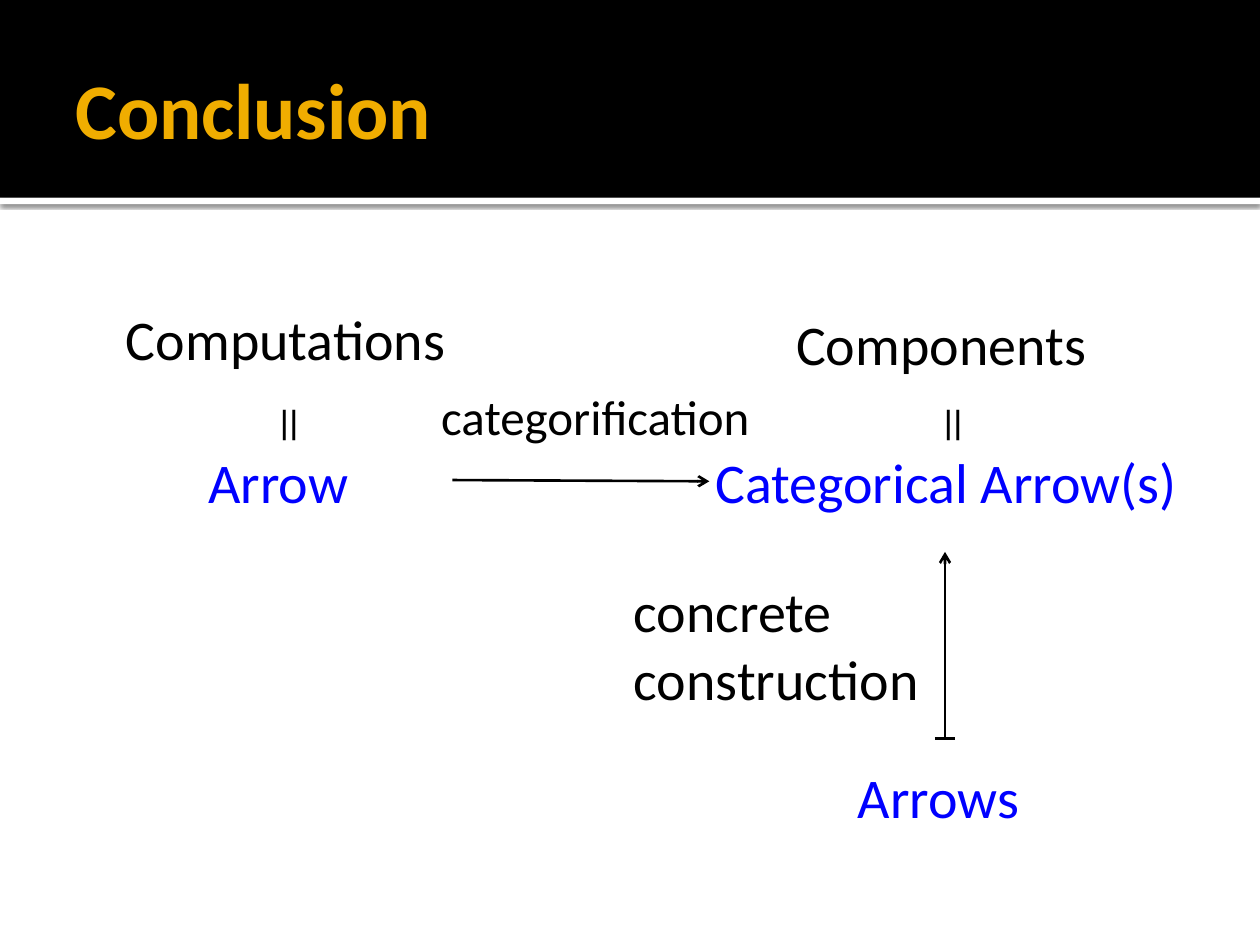
from dataclasses import dataclass
from lxml.etree import SubElement as Sub
from pptx import Presentation
from pptx.dml.color import RGBColor as Rgb
from pptx.enum.shapes import MSO_CONNECTOR as Conn, MSO_SHAPE as Kind
from pptx.enum.text import MSO_ANCHOR as Anchor, PP_ALIGN as Align
from pptx.oxml.ns import qn
from pptx.util import Pt

UNIT = 9144


@dataclass(frozen=True)
class Theme:
    """Colours, font and type sizes of the slide."""
    font: str = "Calibri"
    black: Rgb = Rgb(0, 0, 0)
    white: Rgb = Rgb(255, 255, 255)
    gold: Rgb = Rgb(0xF0, 0xAD, 0)
    blue: Rgb = Rgb(0, 0, 255)
    head: int = 45
    body: int = 32
    label: int = 28
    sign: int = 24
    rule: float = 1.5


LOOK = Theme()


def px(*nums):
    """Turn px lengths into EMU."""
    return [num * UNIT for num in nums]


def apply(item, form):
    """Set each attribute named in a dict."""
    for key, val in form.items():
        setattr(item, key, val)


def text(slide, box, words, size=LOOK.body, tint=LOOK.black, bold=False,
         align=Align.LEFT, frame=None, vert=None):
    """Place a text box with one paragraph for each line."""
    body = slide.shapes.add_textbox(*px(*box)).text_frame
    apply(body, {"word_wrap": True, "text": words, **(frame or {})})
    if vert:
        body._txBody.bodyPr.set("vert", vert)
    for para in body.paragraphs:
        para.alignment = align
        font = para.runs[0].font
        apply(font, {"name": LOOK.font, "size": Pt(size), "bold": bold})
        font.color.rgb = tint


def line(slide, start, end, arrow=False):
    """Draw a straight rule, with an arrowhead at its end if asked."""
    rule = slide.shapes.add_connector(Conn.STRAIGHT, *px(*start, *end))
    rule.line.width = Pt(LOOK.rule)
    rule.line.color.rgb = LOOK.black
    if arrow:
        Sub(rule.line._get_or_add_ln(), qn("a:tailEnd"), type="arrow")
    Sub(rule._element.spPr, qn("a:effectLst"))


def bar(slide, box, tint):
    """Draw a plain filled bar."""
    shape = slide.shapes.add_shape(Kind.RECTANGLE, *px(*box))
    shape.shadow.inherit = False
    shape.fill.solid()
    shape.fill.fore_color.rgb = tint
    shape.line.fill.background()
    return shape


def shade(shape):
    """Cast a soft shadow straight down."""
    glow = Sub(shape._element.spPr.find(qn("a:effectLst")), qn("a:outerShdw"),
               blurRad=str(Pt(2.5)), dist=str(Pt(0.8)), dir="5400000",
               algn="tl", rotWithShape="0")
    tone = Sub(glow, qn("a:srgbClr"), val=str(LOOK.black))
    Sub(tone, qn("a:alpha"), val="60000")


def header(slide, box, title):
    """Place the title band and the shaded strip under it."""
    x, y, w, h = box
    shade(bar(slide, (x, y + h, w, 5), LOOK.white))
    bar(slide, box, LOOK.black)
    text(slide, (x + 50, y + 17, w - 100, 137), title, LOOK.head, LOOK.gold,
         True, frame={"vertical_anchor": Anchor.MIDDLE})


def equals(slide, x, y):
    """Place an upright equals sign."""
    text(slide, (x, y, 61, 44), "＝", LOOK.sign,
         frame={"word_wrap": False}, vert="eaVert")


def source(slide, box):
    """Place the computations column."""
    x, y, w, h = box
    text(slide, (x, y, w, 64), "Computations",
         frame=dict(zip(("margin_left", "margin_top"), px(69, 10))))
    equals(slide, x + 163, y + 79)
    text(slide, (x + 78, y + h - 64, 234, 64), "Arrow", tint=LOOK.blue,
         align=Align.CENTER, frame={"margin_right": px(20)[0]})


def link(slide, box):
    """Place the labelled arrow between the columns."""
    x, y, w, h = box
    text(slide, (x, y, w, 57), "categorification", LOOK.label,
         align=Align.CENTER)
    line(slide, (x + 31, y + h - 1), (x + 235, y + h), True)


def target(slide, box):
    """Place the components column."""
    x, y, w, h = box
    text(slide, (x + 66, y, 259, 64), "Components")
    equals(slide, x + 165, y + 70)
    text(slide, (x, y + h - 64, w, 64), "Categorical Arrow(s)",
         tint=LOOK.blue, align=Align.CENTER, frame={"word_wrap": False})


def build(slide, box):
    """Place the concrete construction under the components."""
    x, y, w, h = box
    mid, foot = x + 257, y + 148
    text(slide, (x + 140, y + h - 64, w - 140, 64), "Arrows", tint=LOOK.blue,
         align=Align.CENTER, frame={"margin_right": px(20)[0]})
    line(slide, (mid, foot), (mid, y), True)
    line(slide, (mid - 8, foot), (mid + 8, foot))
    text(slide, (x, y + 15, 249, 118), "concrete\nconstruction",
         frame={"word_wrap": False})


def main():
    """Build and save the slide."""
    deck = Presentation()
    deck.slide_width, deck.slide_height = px(1000, 750)
    slide = deck.slides.add_slide(deck.slide_layouts[6])
    header(slide, (0, 0, 1000, 157), "Conclusion")
    source(slide, (31, 232, 356, 182))
    link(slide, (328, 302, 289, 80))
    target(slide, (556, 241, 390, 173))
    build(slide, (493, 438, 374, 226))
    deck.save("out.pptx")


if __name__ == "__main__":
    main()
